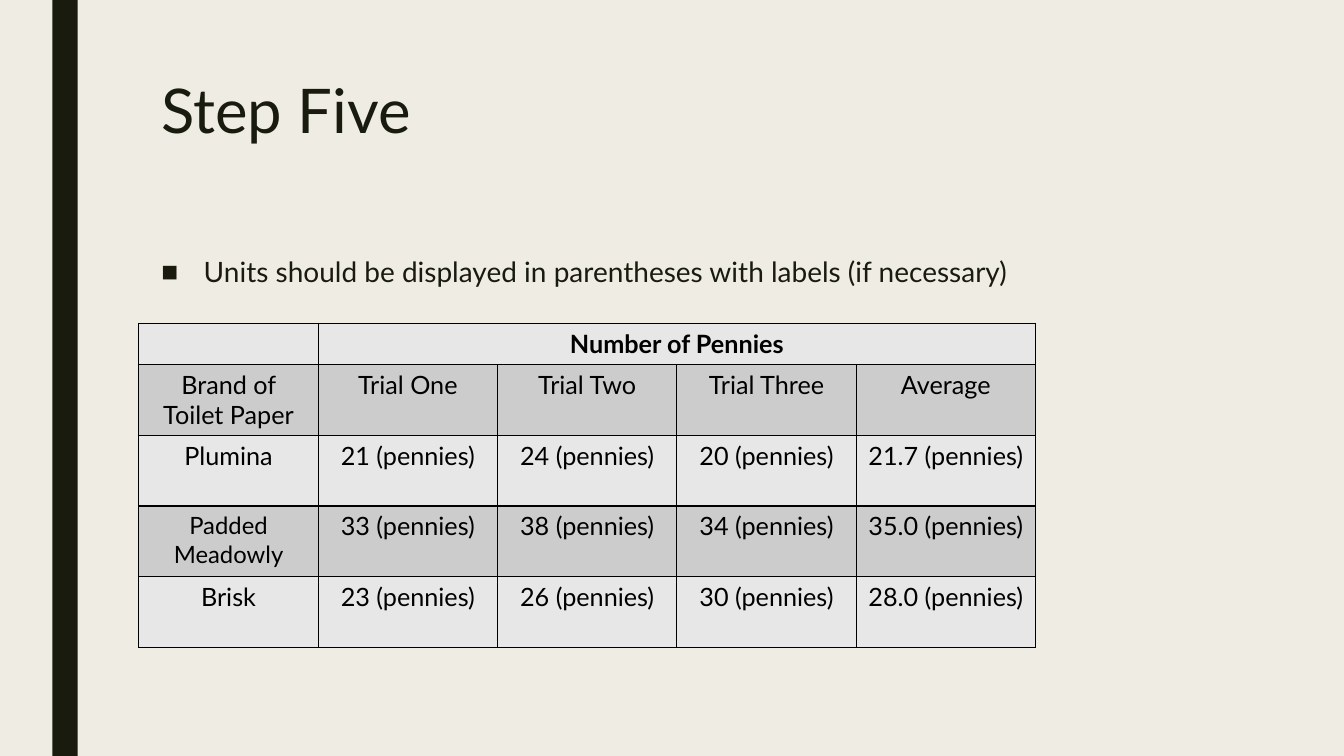
from lxml import etree
from pptx import Presentation
from pptx.dml.color import RGBColor
from pptx.enum.shapes import MSO_SHAPE
from pptx.enum.text import MSO_ANCHOR, MSO_AUTO_SIZE, PP_ALIGN
from pptx.oxml import parse_xml
from pptx.oxml.ns import nsdecls, qn
from pptx.util import Cm, Pt

FONT = "Lato"
CREAM = RGBColor(0xEF, 0xED, 0xE3)
DARK_OLIVE = RGBColor(0x19, 0x1B, 0x0E)
BLACK = RGBColor(0x00, 0x00, 0x00)
LIGHT_GRAY = RGBColor(0xE7, 0xE7, 0xE7)
MID_GRAY = RGBColor(0xCC, 0xCC, 0xCC)

COLUMN_WIDTH = Cm(4.52)
HEADING_HEIGHT = Cm(1.04)
ROW_HEIGHT = Cm(1.78)
ROWS = [
    ["", "Number of Pennies", "", "", ""],
    ["Brand of Toilet Paper", "Trial One", "Trial Two", "Trial Three", "Average"],
    ["Plumina", "21 (pennies)", "24 (pennies)", "20 (pennies)", "21.7 (pennies)"],
    ["Padded Meadowly", "33 (pennies)", "38 (pennies)", "34 (pennies)", "35.0 (pennies)"],
    ["Brisk", "23 (pennies)", "26 (pennies)", "30 (pennies)", "28.0 (pennies)"],
]


def format_runs(paragraph, size, color, bold=False):
    for run in paragraph.runs:
        run.font.name = FONT
        run.font.size = Pt(size)
        run.font.bold = bold
        run.font.color.rgb = color


def fill_placeholder(placeholder, text, top, height, size, line_spacing):
    """Move a placeholder into the content column and return its paragraph."""
    placeholder.left, placeholder.width = Cm(3.81), Cm(26.67)
    placeholder.top, placeholder.height = top, height
    frame = placeholder.text_frame
    frame.text = text
    frame.word_wrap = True
    frame.auto_size = MSO_AUTO_SIZE.NONE
    frame.vertical_anchor = MSO_ANCHOR.TOP
    paragraph = frame.paragraphs[0]
    paragraph.alignment = PP_ALIGN.LEFT
    paragraph.line_spacing = line_spacing
    format_runs(paragraph, size, DARK_OLIVE)
    return paragraph


def add_square_bullet(paragraph):
    properties = paragraph._p.get_or_add_pPr()
    properties.set("marL", str(Cm(1.07)))
    properties.set("indent", str(-Cm(1.07)))
    etree.SubElement(properties, qn("a:buChar")).set("char", "■")


def add_side_bar(slide, height):
    bar = slide.shapes.add_shape(MSO_SHAPE.RECTANGLE, Cm(1.32), 0, Cm(0.64), height)
    bar.shadow.inherit = False
    bar.fill.solid()
    bar.fill.fore_color.rgb = DARK_OLIVE
    bar.line.fill.background()


def add_cell_borders(cell):
    properties = cell._tc.get_or_add_tcPr()
    for index, side in enumerate(("lnL", "lnR", "lnT", "lnB")):
        border = parse_xml(
            f'<a:{side} {nsdecls("a")} w="{Pt(1)}"><a:solidFill>'
            f'<a:srgbClr val="{BLACK}"/></a:solidFill></a:{side}>'
        )
        properties.insert(index, border)


def add_pennies_table(slide):
    column_count = len(ROWS[0])
    height = HEADING_HEIGHT + ROW_HEIGHT * (len(ROWS) - 1)
    table = slide.shapes.add_table(
        len(ROWS), column_count, Cm(3.5), Cm(8.15), COLUMN_WIDTH * column_count, height
    ).table
    for column in table.columns:
        column.width = COLUMN_WIDTH
    for row_index, texts in enumerate(ROWS):
        table.rows[row_index].height = ROW_HEIGHT if row_index else HEADING_HEIGHT
        for column_index, text in enumerate(texts):
            cell = table.cell(row_index, column_index)
            cell.text = text
            cell.fill.solid()
            cell.fill.fore_color.rgb = MID_GRAY if row_index % 2 else LIGHT_GRAY
            paragraph = cell.text_frame.paragraphs[0]
            paragraph.alignment = PP_ALIGN.CENTER
            size = 17 if (row_index, column_index) == (3, 0) else 18
            format_runs(paragraph, size, BLACK, bold=row_index == 0)
            add_cell_borders(cell)
    table.cell(0, 1).merge(table.cell(0, column_count - 1))


def main():
    presentation = Presentation()
    presentation.slide_width, presentation.slide_height = Cm(33.87), Cm(19.05)
    slide = presentation.slides.add_slide(presentation.slide_layouts[1])
    slide.background.fill.solid()
    slide.background.fill.fore_color.rgb = CREAM

    add_side_bar(slide, presentation.slide_height)
    fill_placeholder(slide.shapes.title, "Step Five", Cm(1.9), Cm(4.11), 44, 0.89)
    bullet = fill_placeholder(
        slide.placeholders[1],
        "Units should be displayed in parentheses with labels (if necessary)",
        Cm(6.35), Cm(9.96), 20, 0.94,
    )
    bullet.space_before, bullet.space_after = Pt(10), Pt(2)
    add_square_bullet(bullet)
    add_pennies_table(slide)
    presentation.save("out.pptx")


if __name__ == "__main__":
    main()
